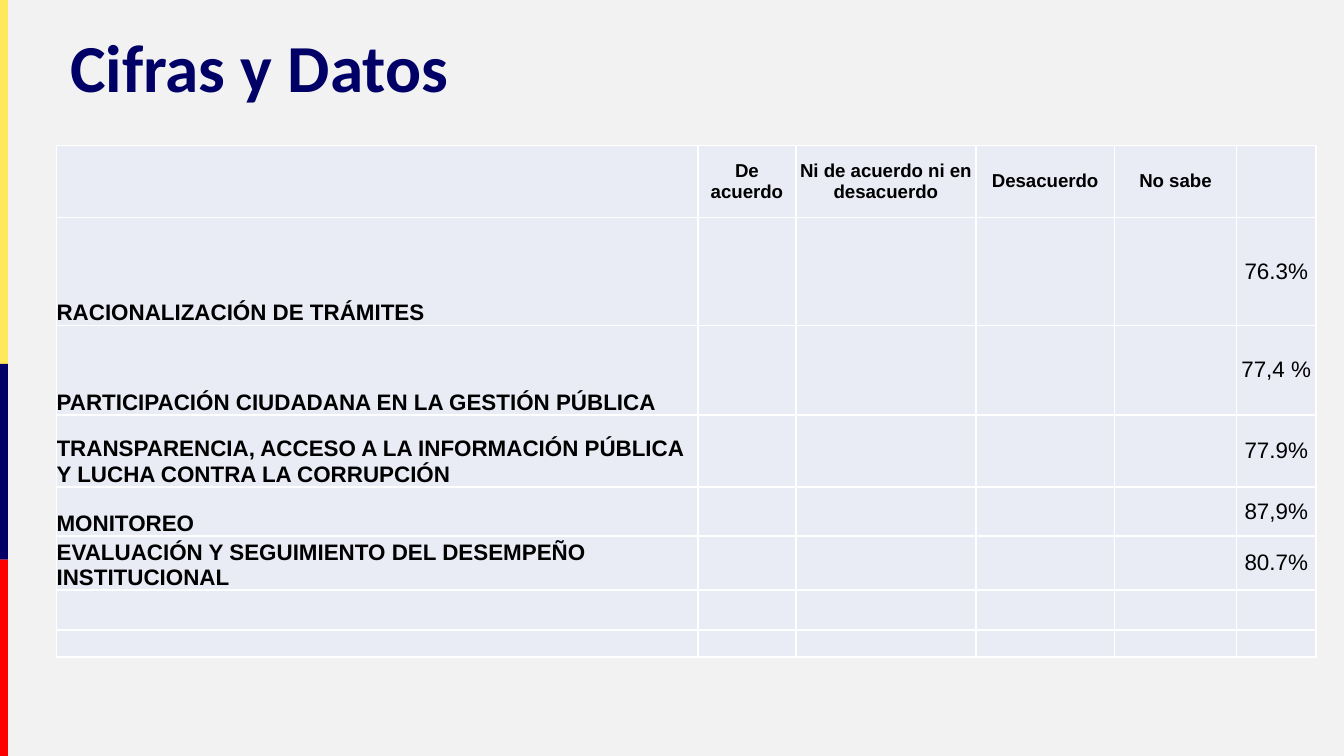
from lxml import etree
from pptx import Presentation
from pptx.dml.color import RGBColor
from pptx.enum import shapes, text
from pptx.oxml.ns import qn
from pptx.util import Cm, Pt

COLORS = {"background": "F2F2F2", "yellow": "FFE85B", "navy": "000066",
          "red": "FF0000", "cell": "E9EBF5", "border": "FFFFFF", "ink": "000000"}
TITLE = "Cifras y Datos"
HEADERS = ["", "De acuerdo", "Ni de acuerdo ni en desacuerdo", "Desacuerdo", "No sabe", ""]
RESULTS = [
    ("RACIONALIZACIÓN DE TRÁMITES", "76.3%"),
    ("PARTICIPACIÓN CIUDADANA EN LA GESTIÓN PÚBLICA", "77,4 %"),
    ("TRANSPARENCIA, ACCESO A LA INFORMACIÓN PÚBLICA Y LUCHA CONTRA LA CORRUPCIÓN", "77.9%"),
    ("MONITOREO", "87,9%"),
    ("EVALUACIÓN Y SEGUIMIENTO DEL DESEMPEÑO INSTITUCIONAL", "80.7%"),
    ("", ""),
    ("", ""),
]
COL_WIDTHS = [12.12, 1.85, 3.4, 2.62, 2.31, 1.5]
ROW_HEIGHTS = [1.36, 2.04, 1.69, 1.36, 0.93, 1.02, 0.76, 0.51]
STRIPES = [("yellow", 6.88), ("navy", 3.7), ("red", 3.71)]


def rgb(name):
    return RGBColor.from_string(COLORS[name])


def write(tf, content, size=12, font="Arial", color="ink", bold=False,
          align=text.PP_ALIGN.LEFT):
    p = tf.paragraphs[0]
    p.alignment = align
    if not content:
        etree.SubElement(p._p, qn("a:endParaRPr"), sz=str(size * 100))
        return
    r = p.add_run()
    r.text = content
    r.font.size = Pt(size)
    r.font.name = font
    r.font.bold = bold
    r.font.color.rgb = rgb(color)


def format_cell(cell, anchor):
    cell.margin_left = cell.margin_right = cell.margin_top = cell.margin_bottom = 0
    cell.vertical_anchor = anchor
    cell.fill.solid()
    cell.fill.fore_color.rgb = rgb("cell")
    tc_pr = cell._tc.get_or_add_tcPr()
    for i, side in enumerate(("lnL", "lnR", "lnT", "lnB")):
        ln = etree.Element(qn(f"a:{side}"), w=str(Pt(1)))
        fill = etree.SubElement(ln, qn("a:solidFill"))
        etree.SubElement(fill, qn("a:srgbClr"), val=COLORS["border"])
        tc_pr.insert(i, ln)


def add_title(s):
    sp = s.shapes.title
    sp.left, sp.top, sp.width, sp.height = Cm(1.07), Cm(0.36), Cm(8.43), Cm(1.8)
    tf = sp.text_frame
    tf.word_wrap = False
    tf.vertical_anchor = text.MSO_ANCHOR.TOP
    write(tf, TITLE, size=36, font="Calibri", color="navy", bold=True)


def add_stripes(s):
    top = 0
    for color, height in STRIPES:
        sp = s.shapes.add_shape(shapes.MSO_SHAPE.RECTANGLE, 0, Cm(top), Cm(0.15), Cm(height))
        sp.shadow.inherit = False
        sp.fill.solid()
        sp.fill.fore_color.rgb = rgb(color)
        sp.line.fill.background()
        top += height


def add_results(s):
    rows = [HEADERS] + [[label, "", "", "", "", value] for label, value in RESULTS]
    table = s.shapes.add_table(len(rows), len(HEADERS), Cm(1.07), Cm(2.75),
                               Cm(sum(COL_WIDTHS)), Cm(sum(ROW_HEIGHTS))).table
    table.first_row = table.horz_banding = False
    for col, width in zip(table.columns, COL_WIDTHS):
        col.width = Cm(width)
    for row, height in zip(table.rows, ROW_HEIGHTS):
        row.height = Cm(height)
    for i, row in enumerate(rows):
        for j, content in enumerate(row):
            cell = table.cell(i, j)
            is_label = i > 0 and j == 0
            format_cell(cell, text.MSO_ANCHOR.BOTTOM if is_label else text.MSO_ANCHOR.MIDDLE)
            write(cell.text_frame, content,
                  size=12 if i and content else 10,
                  bold=i == 0 or is_label,
                  align=text.PP_ALIGN.LEFT if is_label else text.PP_ALIGN.CENTER)


def main():
    prs = Presentation()
    prs.slide_width, prs.slide_height = Cm(25.4), Cm(14.29)
    s = prs.slides.add_slide(prs.slide_layouts[5])
    s.background.fill.solid()
    s.background.fill.fore_color.rgb = rgb("background")
    add_title(s)
    add_stripes(s)
    add_results(s)
    prs.save("out.pptx")


if __name__ == "__main__":
    main()
